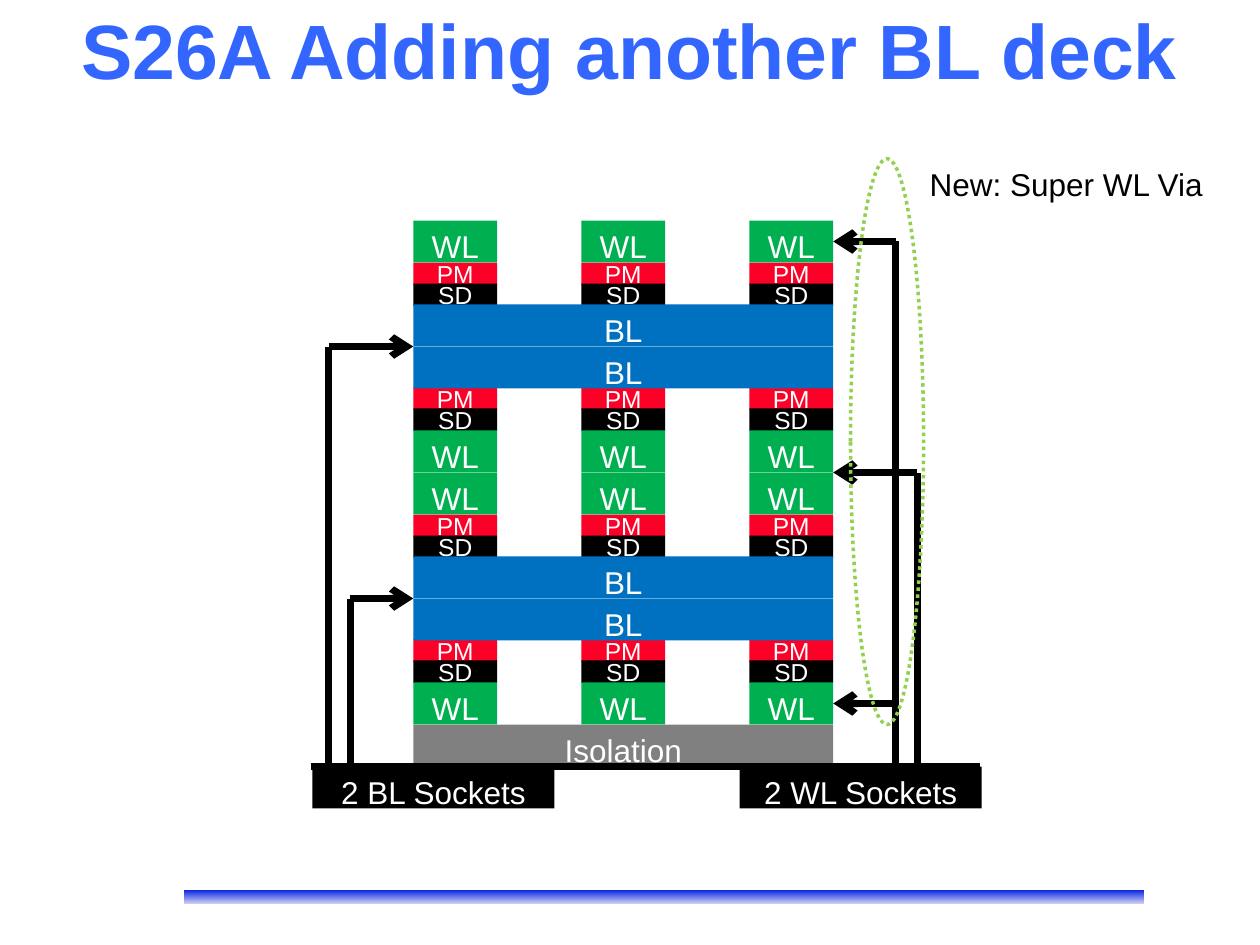
import pptx
import pptx.util
import pptx.dml.color
import pptx.enum.dml
import pptx.enum.shapes
import pptx.enum.text
import pptx.oxml.ns
from lxml import etree

Inches = pptx.util.Inches
Pt = pptx.util.Pt
SHAPE = pptx.enum.shapes.MSO_SHAPE
ALIGN = pptx.enum.text.PP_ALIGN
ANCHOR = pptx.enum.text.MSO_ANCHOR

BLACK, WHITE = "000000", "FFFFFF"
COLOURS = {"WL": "00B050", "BL": "0070C0", "PM": "FC0128", "SD": BLACK}
STACK = ["WL", "PM/SD", "BL", "BL", "PM/SD", "WL",
         "WL", "PM/SD", "BL", "BL", "PM/SD", "WL"]
LEFT, TOP, ROW = 3.28, 1.75, 1 / 3
PILLAR_W, DECK_W = 2 * ROW, 10 * ROW
PILLARS = [LEFT + i * 4 * ROW for i in range(3)]
RIGHT = LEFT + DECK_W
BASE = TOP + (len(STACK) + 1) * ROW


def rgb(value):
    return pptx.dml.color.RGBColor.from_string(value)


def write(tf, text, size, colour, align, anchor, bold=False):
    tf.word_wrap = True
    tf.vertical_anchor = anchor
    p = tf.paragraphs[0]
    p.text = text
    p.alignment = align
    p.font.name = "Arial"
    p.font.size = Pt(size)
    p.font.bold = bold
    p.font.color.rgb = rgb(colour)


def add_label(slide, x, y, w, h, text, size, colour, align, anchor, bold=False):
    sp = slide.shapes.add_textbox(Inches(x), Inches(y), Inches(w), Inches(h))
    write(sp.text_frame, text, size, colour, align, anchor, bold)


def add_shape(slide, kind, x, y, w, h):
    sp = slide.shapes.add_shape(kind, Inches(x), Inches(y), Inches(w), Inches(h))
    sp.shadow.inherit = False
    return sp


def add_block(slide, x, y, w, text, colour, h=ROW, size=18, anchor=ANCHOR.TOP):
    sp = add_shape(slide, SHAPE.RECTANGLE, x, y, w, h)
    sp.fill.solid()
    sp.fill.fore_color.rgb = rgb(colour)
    sp.line.fill.background()
    write(sp.text_frame, text, size, WHITE, ALIGN.CENTER, anchor)
    return sp


def add_wire(slide, x1, y1, x2, y2, arrow=False, target=None):
    line = slide.shapes.add_connector(
        pptx.enum.shapes.MSO_CONNECTOR.STRAIGHT,
        Inches(x1), Inches(y1), Inches(x2), Inches(y2))
    line.line.color.rgb = rgb(BLACK)
    line.line.width = Pt(4)
    if target is not None:
        line.end_connect(target, 3)
    if arrow:
        ln = line.line._get_or_add_ln()
        etree.SubElement(ln, pptx.oxml.ns.qn("a:tailEnd"), type="arrow")
    etree.SubElement(line._element.spPr, pptx.oxml.ns.qn("a:effectLst"))


def add_footer_bar(slide):
    bar = add_shape(slide, SHAPE.RECTANGLE, 1.45, 7.06, 7.64, 0.12)
    bar.fill.gradient()
    bar.fill.gradient_angle = 270
    for stop, (position, colour) in zip(bar.fill.gradient_stops,
                                        [(0, "0020E0"), (1, "DADAF6")]):
        stop.position = position
        stop.color.rgb = rgb(colour)
    bar.line.color.rgb = rgb(WHITE)
    bar.line.width = Pt(1)


def add_cells(slide):
    for row, name in enumerate(STACK):
        if name != "PM/SD":
            continue
        y = TOP + row * ROW - (0.01 if STACK[row - 1] == "BL" else 0)
        for x in PILLARS:
            for i, part in enumerate(name.split("/")):
                add_block(slide, x, y + i * ROW / 2, PILLAR_W, part,
                          COLOURS[part], 0.18, 14, ANCHOR.MIDDLE)


def add_lines(slide):
    last_wl = {}
    for row, name in enumerate(STACK):
        y = TOP + row * ROW
        if name == "BL":
            add_block(slide, LEFT, y, DECK_W, name, COLOURS[name])
        elif name == "WL":
            for x in PILLARS:
                last_wl[row] = add_block(slide, x, y, PILLAR_W, name, COLOURS[name])
    return last_wl


def add_wiring(slide, last_wl):
    add_wire(slide, 7.78, BASE, 2.47, BASE)
    for x, row in [(2.61, 3), (2.78, 9)]:
        y = TOP + row * ROW
        add_wire(slide, x, BASE, x, y)
        add_wire(slide, x, y, LEFT, y, arrow=True)
    for x, rows in [(7.11, [0.5, 11.5]), (7.28, [6])]:
        add_wire(slide, x, BASE, x, TOP + rows[0] * ROW)
        for row in rows:
            y = TOP + row * ROW
            target = last_wl[int(row)] if row % 1 else None
            add_wire(slide, x, y, RIGHT, y, arrow=True, target=target)


def add_super_via(slide):
    via = add_shape(slide, SHAPE.OVAL, 6.75, 1.26, 0.58, 4.49)
    via.fill.background()
    via.line.color.rgb = rgb("92D050")
    via.line.width = Pt(2)
    via.line.dash_style = pptx.enum.dml.MSO_LINE.ROUND_DOT
    add_label(slide, 7.28, 1.26, 2.47, 0.4, "New: Super WL Via", 18, BLACK,
              ALIGN.LEFT, ANCHOR.TOP)


def main():
    prs = pptx.Presentation()
    prs.slide_width, prs.slide_height = Inches(10), Inches(7.5)
    slide = prs.slides.add_slide(prs.slide_layouts[6])
    add_footer_bar(slide)
    add_label(slide, 0.5, 0.08, 9, 0.62, "S26A Adding another BL deck", 44,
              "3366FF", ALIGN.CENTER, ANCHOR.MIDDLE, bold=True)
    add_block(slide, LEFT, BASE - ROW, DECK_W, "Isolation", "808080")
    add_cells(slide)
    last_wl = add_lines(slide)
    add_wiring(slide, last_wl)
    for x, text in [(2.48, "2 BL Sockets"), (5.87, "2 WL Sockets")]:
        add_block(slide, x, BASE, 1.92, text, BLACK)
    add_super_via(slide)
    prs.save("out.pptx")


if __name__ == "__main__":
    main()
